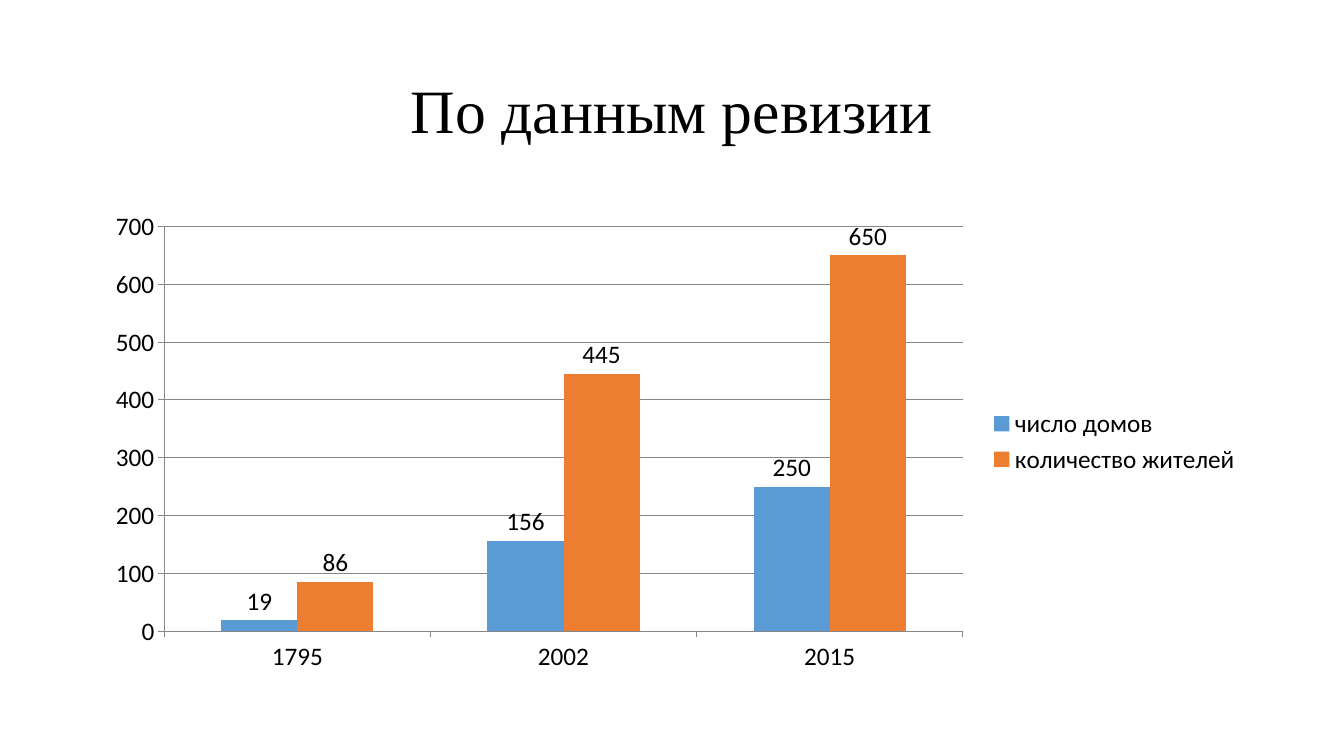
from pptx import Presentation
from pptx.chart.data import CategoryChartData
from pptx.dml.color import RGBColor
from pptx.enum.chart import XL_CHART_TYPE, XL_LABEL_POSITION, XL_LEGEND_POSITION, XL_TICK_MARK
from pptx.enum.text import MSO_ANCHOR, PP_ALIGN
from pptx.util import Inches, Pt

BLACK = RGBColor(0x00, 0x00, 0x00)
GRAY = RGBColor(0x87, 0x87, 0x87)
BLUE = RGBColor(0x5B, 0x9B, 0xD5)
ORANGE = RGBColor(0xED, 0x7D, 0x31)

HEADING = "По данным ревизии"
YEARS = ["1795", "2002", "2015"]
COUNTS = [
    ("число домов", [19, 156, 250], BLUE),
    ("количество жителей", [86, 445, 650], ORANGE),
]

SLIDE_WIDTH, SLIDE_HEIGHT = Inches(13.33), Inches(7.5)
MARGIN = Inches(0.92)
CONTENT_WIDTH = SLIDE_WIDTH - 2 * MARGIN


def add_heading(slide):
    heading = slide.shapes.add_textbox(MARGIN, Inches(0.4), CONTENT_WIDTH, Inches(1.45))
    frame = heading.text_frame
    frame.word_wrap = True
    frame.vertical_anchor = MSO_ANCHOR.MIDDLE
    frame.text = HEADING
    line = frame.paragraphs[0]
    line.alignment = PP_ALIGN.CENTER
    line.line_spacing = 0.9
    font = line.runs[0].font
    font.name, font.size = "Times New Roman", Pt(44)
    font.color.rgb = BLACK


def add_census_chart(slide):
    census = CategoryChartData()
    census.categories = YEARS
    for name, values, _ in COUNTS:
        census.add_series(name, values)
    chart = slide.shapes.add_chart(
        XL_CHART_TYPE.COLUMN_CLUSTERED, MARGIN, Inches(2), CONTENT_WIDTH, Inches(4.76), census
    ).chart
    chart.has_title = False
    chart.font.name, chart.font.size = "Calibri", Pt(18)
    chart.font.color.rgb = BLACK
    chart.has_legend = True
    chart.legend.position = XL_LEGEND_POSITION.RIGHT
    chart.legend.include_in_layout = False

    counts_axis = chart.value_axis
    counts_axis.minimum_scale, counts_axis.maximum_scale = 0, 700
    counts_axis.major_unit = 100
    counts_axis.has_major_gridlines = True
    for axis in (chart.category_axis, counts_axis):
        axis.major_tick_mark = XL_TICK_MARK.OUTSIDE
        axis.minor_tick_mark = XL_TICK_MARK.NONE
    for line in (chart.category_axis.format.line, counts_axis.format.line,
                 counts_axis.major_gridlines.format.line):
        line.color.rgb = GRAY
        line.width = Pt(0.75)

    columns = chart.plots[0]
    columns.gap_width, columns.overlap = 150, 0
    columns.vary_by_categories = False
    for series, (_, _, color) in zip(columns.series, COUNTS):
        series.format.fill.solid()
        series.format.fill.fore_color.rgb = color
        series.data_labels.show_value = True
        series.data_labels.position = XL_LABEL_POSITION.OUTSIDE_END


def main():
    deck = Presentation()
    deck.slide_width, deck.slide_height = SLIDE_WIDTH, SLIDE_HEIGHT
    slide = deck.slides.add_slide(deck.slide_layouts[6])
    add_heading(slide)
    add_census_chart(slide)
    deck.save("out.pptx")


if __name__ == "__main__":
    main()
